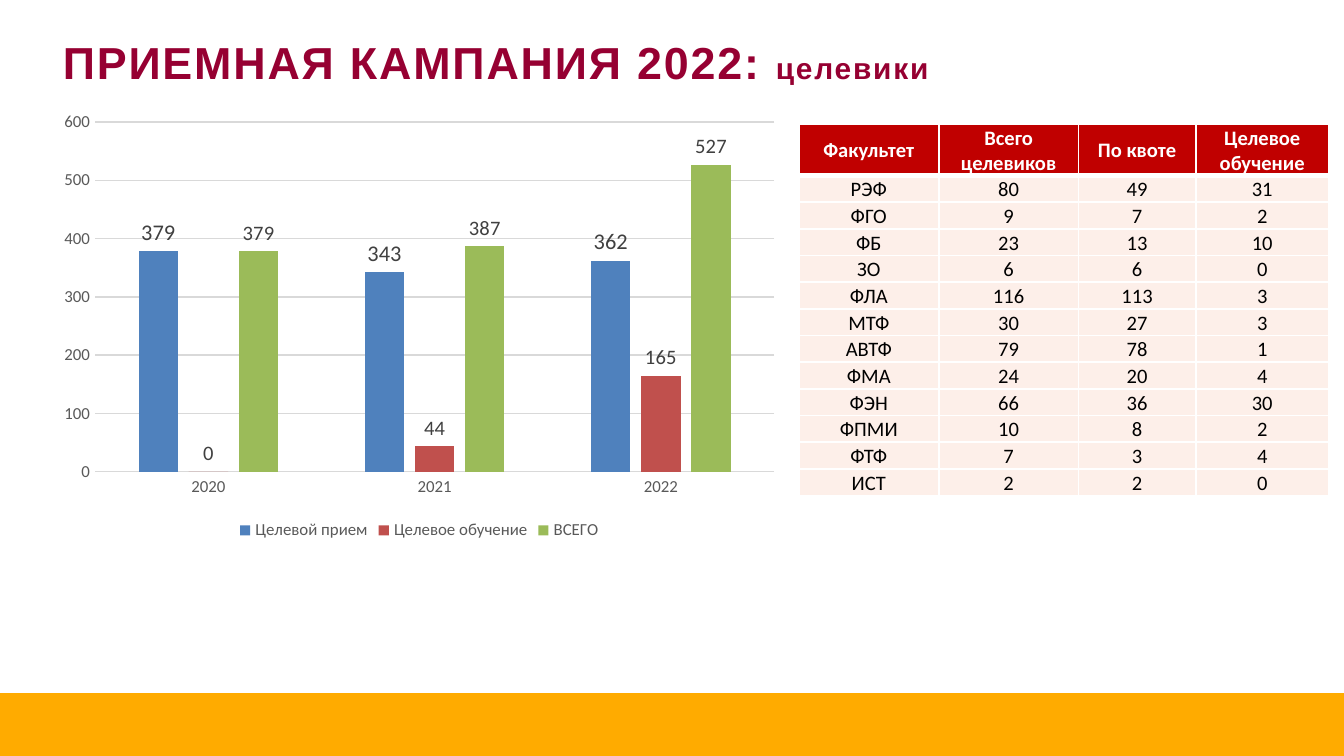
"""Build the slide on the 2022 targeted admission campaign."""
from lxml import etree
from pptx import Presentation
from pptx.chart import data as chart_data
from pptx.dml.color import RGBColor
from pptx.enum import chart as ch, shapes, text
from pptx.oxml import ns
from pptx.util import Pt

MAROON = RGBColor(0x96, 0x00, 0x32)
AMBER = RGBColor(0xFF, 0xAB, 0x00)
RED = RGBColor(0xC0, 0x00, 0x00)
PEACH = RGBColor(0xFD, 0xEF, 0xE9)
WHITE = RGBColor(0xFF, 0xFF, 0xFF)
BLACK = RGBColor(0x00, 0x00, 0x00)
GRID = RGBColor(0xD9, 0xD9, 0xD9)
AXIS_TEXT = RGBColor(0x59, 0x59, 0x59)
LABEL_TEXT = RGBColor(0x40, 0x40, 0x40)
BLUE = RGBColor(0x4F, 0x81, 0xBD)
BRICK = RGBColor(0xC0, 0x50, 0x4D)
GREEN = RGBColor(0x9B, 0xBB, 0x59)


def style_font(font, size, color, name="Calibri", bold=False):
    font.size, font.name, font.bold = Pt(size), name, bold
    font.color.rgb = color


def add_border(cell, side, width):
    line = etree.SubElement(cell._tc.get_or_add_tcPr(), ns.qn(f"a:ln{side}"), w=str(Pt(width)))
    fill = etree.SubElement(line, ns.qn("a:solidFill"))
    etree.SubElement(fill, ns.qn("a:srgbClr"), val=str(WHITE))


prs = Presentation()
prs.slide_width, prs.slide_height = Pt(720), Pt(405)
slide = prs.slides.add_slide(prs.slide_layouts[6])

footer = slide.shapes.add_shape(
    shapes.MSO_SHAPE.RECTANGLE, Pt(0), Pt(371.3), Pt(720), Pt(33.7))
footer.shadow.inherit = False
footer.fill.solid()
footer.fill.fore_color.rgb = AMBER
footer.line.fill.background()

heading = slide.shapes.add_textbox(Pt(26.6), Pt(4.3), Pt(659.5), Pt(56.9)).text_frame
heading.word_wrap = True
heading.vertical_anchor = text.MSO_ANCHOR.MIDDLE
for wording, size in (("ПРИЕМНАЯ КАМПАНИЯ 2022: ", 24), ("целевики", 16)):
    run = heading.paragraphs[0].add_run()
    run.text = wording
    style_font(run.font, size, MAROON, "Arial", True)
    run._r.get_or_add_rPr().set("spc", "100")

admissions = (
    ("Целевой прием", (379, 343, 362), BLUE, 12),
    ("Целевое обучение", (0, 44, 165), BRICK, 11),
    ("ВСЕГО", (379, 387, 527), GREEN, 11),
)
years = chart_data.CategoryChartData()
years.categories = ["2020", "2021", "2022"]
for name, values, color, label_size in admissions:
    years.add_series(name, values)
chart = slide.shapes.add_chart(
    ch.XL_CHART_TYPE.COLUMN_CLUSTERED, Pt(26.6), Pt(55.4), Pt(396), Pt(236.9), years).chart
chart.has_title = False
style_font(chart.font, 10, BLACK)
chart.has_legend = True
chart.legend.position = ch.XL_LEGEND_POSITION.BOTTOM
chart.legend.include_in_layout = False
style_font(chart.legend.font, 9, AXIS_TEXT)

for axis in (chart.category_axis, chart.value_axis):
    axis.major_tick_mark = axis.minor_tick_mark = ch.XL_TICK_MARK.NONE
    style_font(axis.tick_labels.font, 9, AXIS_TEXT)
chart.value_axis.minimum_scale = 0
chart.value_axis.maximum_scale = 600
chart.value_axis.major_unit = 100
chart.value_axis.format.line.fill.background()
for line in (chart.category_axis.format.line, chart.value_axis.major_gridlines.format.line):
    line.color.rgb = GRID
    line.width = Pt(0.75)

columns = chart.plots[0]
columns.gap_width, columns.overlap = 219, -27
columns.vary_by_categories = False
for series, (name, values, color, label_size) in zip(columns.series, admissions):
    series.format.fill.solid()
    series.format.fill.fore_color.rgb = color
    series.invert_if_negative = False
    labels = series.data_labels
    labels.show_value = True
    labels.position = ch.XL_LABEL_POSITION.OUTSIDE_END
    style_font(labels.font, label_size, LABEL_TEXT)

faculties = (
    ("Факультет", "Всего целевиков", "По квоте", "Целевое обучение"),
    ("РЭФ", 80, 49, 31),
    ("ФГО", 9, 7, 2),
    ("ФБ", 23, 13, 10),
    ("ЗО", 6, 6, 0),
    ("ФЛА", 116, 113, 3),
    ("МТФ", 30, 27, 3),
    ("АВТФ", 79, 78, 1),
    ("ФМА", 24, 20, 4),
    ("ФЭН", 66, 36, 30),
    ("ФПМИ", 10, 8, 2),
    ("ФТФ", 7, 3, 4),
    ("ИСТ", 2, 2, 0),
)
table = slide.shapes.add_table(
    len(faculties), 4, Pt(428), Pt(66.5), Pt(283.9), Pt(199.2)).table
for column, width in zip(table.columns, (74.9, 74.9, 62.8, 71.3)):
    column.width = Pt(width)
for row_number, faculty in enumerate(faculties):
    is_header = row_number == 0
    table.rows[row_number].height = Pt(27.6 if is_header else 14.3)
    for cell, value in zip(table.rows[row_number].cells, faculty):
        cell.margin_left = cell.margin_right = cell.margin_top = Pt(0.7)
        cell.margin_bottom = Pt(0)
        cell.vertical_anchor = text.MSO_ANCHOR.MIDDLE
        for side in "LRTB":
            thick = (is_header and side == "B") or (row_number == 1 and side == "T")
            add_border(cell, side, 3 if thick else 1)
        cell.fill.solid()
        cell.fill.fore_color.rgb = RED if is_header else PEACH
        paragraph = cell.text_frame.paragraphs[0]
        paragraph.alignment = text.PP_ALIGN.CENTER
        run = paragraph.add_run()
        run.text = str(value)
        style_font(run.font, 11, WHITE if is_header else BLACK, bold=is_header)

prs.save("out.pptx")
